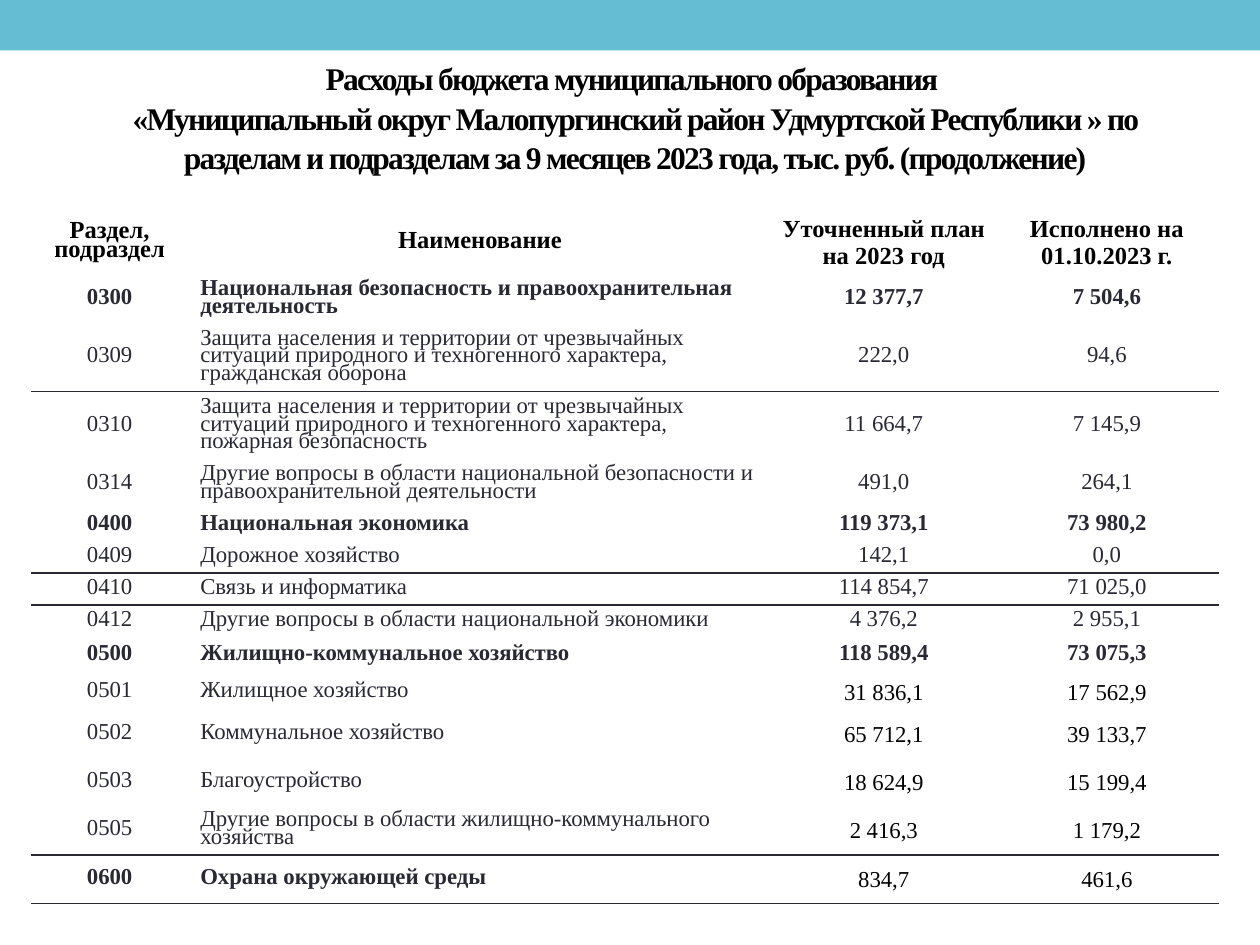
from lxml import etree
from pptx import Presentation
from pptx.dml.color import RGBColor
from pptx.enum.shapes import MSO_SHAPE
from pptx.enum.text import MSO_ANCHOR, MSO_AUTO_SIZE, PP_ALIGN
from pptx.oxml.ns import qn
from pptx.util import Pt

RECTANGLE = MSO_SHAPE.RECTANGLE
MIDDLE = MSO_ANCHOR.MIDDLE
CENTER, LEFT = PP_ALIGN.CENTER, PP_ALIGN.LEFT
NO_AUTOFIT = MSO_AUTO_SIZE.NONE

THEME = {
    "font": "Times New Roman",
    "bar": "64BDD2",
    "black": "000000",
    "ink": "292934",
    "white": "FFFFFF",
    "title": 18,
    "header": 14,
    "body": 13,
}


def add_span(para, text, size, color, bold):
    span = para.add_run()
    span.text = text
    span.font.name = THEME["font"]
    span.font.size = Pt(size)
    span.font.bold = bold
    span.font.color.rgb = RGBColor.from_string(THEME[color])
    return span


def add_border(cell, side, color, width):
    line = etree.SubElement(cell._tc.get_or_add_tcPr(), qn(f"a:ln{side}"), w=str(Pt(width)))
    fill = etree.SubElement(line, qn("a:solidFill"))
    etree.SubElement(fill, qn("a:srgbClr"), val=THEME[color])


deck = Presentation()
deck.slide_width, deck.slide_height = Pt(720), Pt(540)
page = deck.slides.add_slide(deck.slide_layouts[5])

bar = page.shapes.add_shape(RECTANGLE, 0, 0, Pt(720), Pt(28.8))
bar.shadow.inherit = False
bar.fill.solid()
bar.fill.fore_color.rgb = RGBColor.from_string(THEME["bar"])
bar.line.fill.background()
bar.element.getparent().insert(2, bar.element)

title = page.shapes.title
title.left, title.top, title.width, title.height = Pt(36), Pt(21.6), Pt(653.8), Pt(90)
frame = title.text_frame
frame.word_wrap = True
frame.auto_size = NO_AUTOFIT
frame.vertical_anchor = MIDDLE
para = frame.paragraphs[0]
para.alignment = CENTER
para.line_spacing = 1.05
title_lines = [
    "Расходы бюджета муниципального образования ",
    "«Муниципальный округ Малопургинский район Удмуртской Республики » по "
    "разделам и подразделам за 9 месяцев 2023 года, тыс. руб. (продолжение)",
]
for index, text in enumerate(title_lines):
    if index:
        para.add_line_break()
    span = add_span(para, text, THEME["title"], "black", True)
    span.font._element.set("spc", "-100")

rows = [
    (36.7, "Раздел, подраздел", "Наименование", "Уточненный план на 2023 год", "Исполнено на 01.10.2023 г."),
    (28, "0300", "Национальная безопасность и правоохранительная деятельность", "12 377,7", "7 504,6"),
    (39, "0309", "Защита населения и территории от чрезвычайных ситуаций природного и техногенного характера, гражданская оборона", "222,0", "94,6"),
    (39, "0310", "Защита населения и территории от чрезвычайных ситуаций природного и техногенного характера, пожарная безопасность", "11 664,7", "7 145,9"),
    (28, "0314", "Другие вопросы в области национальной безопасности и правоохранительной деятельности", "491,0", "264,1"),
    (18.3, "0400", "Национальная экономика", "119 373,1", "73 980,2"),
    (18.3, "0409", "Дорожное хозяйство", "142,1", "0,0"),
    (18.3, "0410", "Связь и информатика", "114 854,7", "71 025,0"),
    (18.3, "0412", "Другие вопросы в области национальной экономики", "4 376,2", "2 955,1"),
    (21, "0500", "Жилищно-коммунальное хозяйство", "118 589,4", "73 075,3"),
    (21, "0501", "Жилищное хозяйство", "31 836,1", "17 562,9"),
    (27.3, "0502", "Коммунальное хозяйство", "65 712,1", "39 133,7"),
    (27.3, "0503", "Благоустройство", "18 624,9", "15 199,4"),
    (28, "0505", "Другие вопросы в области жилищно-коммунального хозяйства", "2 416,3", "1 179,2"),
    (28, "0600", "Охрана окружающей среды", "834,7", "461,6"),
]
column_widths = [89.3, 334, 127.5, 127.5]
ruled_below = {"0309", "0409", "0410", "0505", "0600"}
plain_amounts_from = "0501"

table = page.shapes.add_table(
    len(rows), len(column_widths), Pt(18), Pt(120.2),
    Pt(sum(column_widths)), Pt(sum(row[0] for row in rows)),
).table
table.horz_banding = False
for column, width in zip(table.columns, column_widths):
    column.width = Pt(width)

top_color, top_width = "white", 1
for row_index, (height, *texts) in enumerate(rows):
    table.rows[row_index].height = Pt(height)
    code = texts[0]
    is_header = row_index == 0
    is_section = code.endswith("00")
    bottom_color = "ink" if code in ruled_below else "white"
    bottom_width = 3 if is_header else 1
    for column_index, text in enumerate(texts):
        cell = table.cell(row_index, column_index)
        is_amount = column_index > 1
        is_plain = is_amount and not is_header and code >= plain_amounts_from
        add_border(cell, "L", "white", 1)
        add_border(cell, "R", "white", 1)
        add_border(cell, "T", top_color, top_width)
        add_border(cell, "B", bottom_color, bottom_width)
        cell.fill.background()
        cell.vertical_anchor = MIDDLE
        para = cell.text_frame.paragraphs[0]
        para.alignment = LEFT if column_index == 1 and not is_header else CENTER
        if is_plain or (is_header and is_amount):
            inset = 0 if is_header else 0.7
            cell.margin_left = cell.margin_right = cell.margin_top = Pt(inset)
            cell.margin_bottom = 0
        else:
            para.line_spacing = 0.7
        size = THEME["header"] if is_header else THEME["body"]
        color = "black" if is_header or is_plain else "ink"
        add_span(para, text, size, color, is_header or (is_section and not is_plain))
    top_color, top_width = bottom_color, bottom_width

deck.save("out.pptx")
